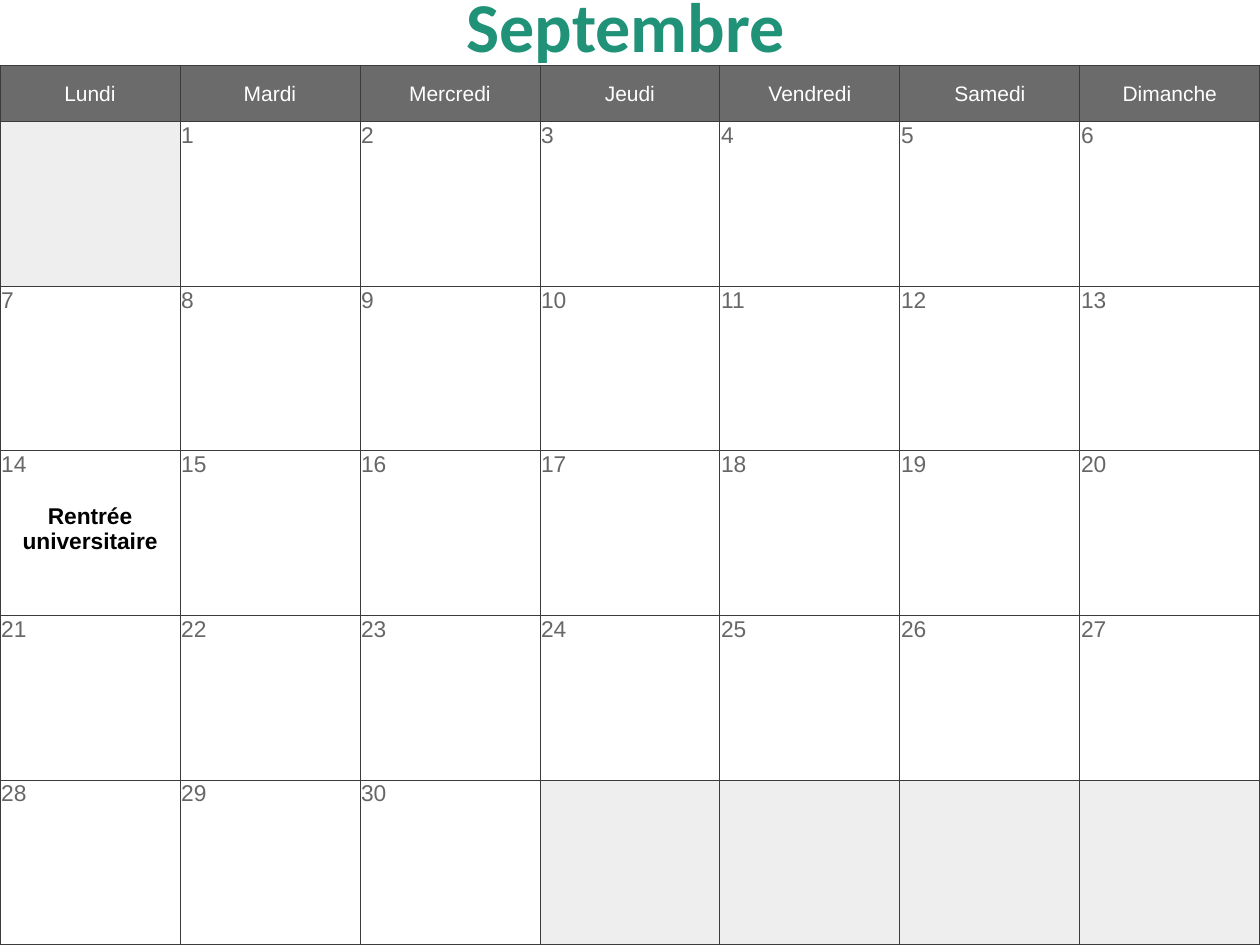
from lxml import etree
from pptx import Presentation
from pptx import util as u
from pptx.dml.color import RGBColor
from pptx.enum import text
from pptx.oxml import ns

Pt = u.Pt
GREEN = RGBColor(0x20, 0x92, 0x77)
HEAD = RGBColor(0x6B, 0x6B, 0x6B)
GREY = RGBColor(0x67, 0x67, 0x67)
PALE = RGBColor(0xEE, 0xEE, 0xEE)
WHITE = RGBColor(0xFF, 0xFF, 0xFF)
BLACK = RGBColor(0, 0, 0)
EDGE = RGBColor(0x3B, 0x3B, 0x3B)
DAYS = ["Lundi", "Mardi", "Mercredi", "Jeudi", "Vendredi", "Samedi", "Dimanche"]
EVENTS = {14: "Rentrée universitaire"}
FIRST, LAST, WEEKS = 1, 30, 5


def write(par, words, size=13, color=GREY, font="Arial", bold=False,
          align=text.PP_ALIGN.LEFT, before=0):
    par.alignment = align
    par.space_before = Pt(before)
    run = par.add_run()
    run.text = words
    run.font.size = Pt(size)
    run.font.name = font
    run.font.bold = bold
    run.font.color.rgb = color


def style(cell, fill):
    cell.margin_left = cell.margin_right = cell.margin_top = Pt(0.7)
    cell.margin_bottom = 0
    props = cell._tc.get_or_add_tcPr()
    for side in ("a:lnL", "a:lnR", "a:lnT", "a:lnB"):
        line = etree.SubElement(props, ns.qn(side), w=str(Pt(0.5)))
        solid = etree.SubElement(line, ns.qn("a:solidFill"))
        etree.SubElement(solid, ns.qn("a:srgbClr"), val=str(EDGE))
    cell.fill.solid()
    cell.fill.fore_color.rgb = fill


deck = Presentation()
deck.slide_width, deck.slide_height = Pt(720), Pt(540)
slide = deck.slides.add_slide(deck.slide_layouts[6])
center = text.PP_ALIGN.CENTER

grid = slide.shapes.add_table(
    WEEKS + 1, len(DAYS), 0, Pt(37.5), Pt(720), Pt(502.5)).table
for col in grid.columns:
    col.width = Pt(720 / len(DAYS))
for row in grid.rows:
    row.height = Pt(94.1)
grid.rows[0].height = Pt(32)

for col, name in enumerate(DAYS):
    cell = grid.cell(0, col)
    style(cell, HEAD)
    cell.vertical_anchor = text.MSO_ANCHOR.MIDDLE
    write(cell.text_frame.paragraphs[0], name, size=12, color=WHITE, align=center)

for week in range(WEEKS):
    for col in range(len(DAYS)):
        day = week * len(DAYS) + col - FIRST + 1
        cell = grid.cell(week + 1, col)
        inside = 1 <= day <= LAST
        style(cell, WHITE if inside else PALE)
        if inside:
            write(cell.text_frame.paragraphs[0], str(day))
        if day in EVENTS:
            write(cell.text_frame.add_paragraph(), EVENTS[day], color=BLACK,
                  bold=True, align=center, before=15)

title = slide.shapes.add_textbox(Pt(258.5), Pt(-13.7), Pt(198), Pt(55.4))
frame = title.text_frame
frame.word_wrap = False
frame.auto_size = text.MSO_AUTO_SIZE.SHAPE_TO_FIT_TEXT
write(frame.paragraphs[0], "Septembre", size=40, color=GREEN,
      font="Calibri", bold=True, align=center)

deck.save("out.pptx")
